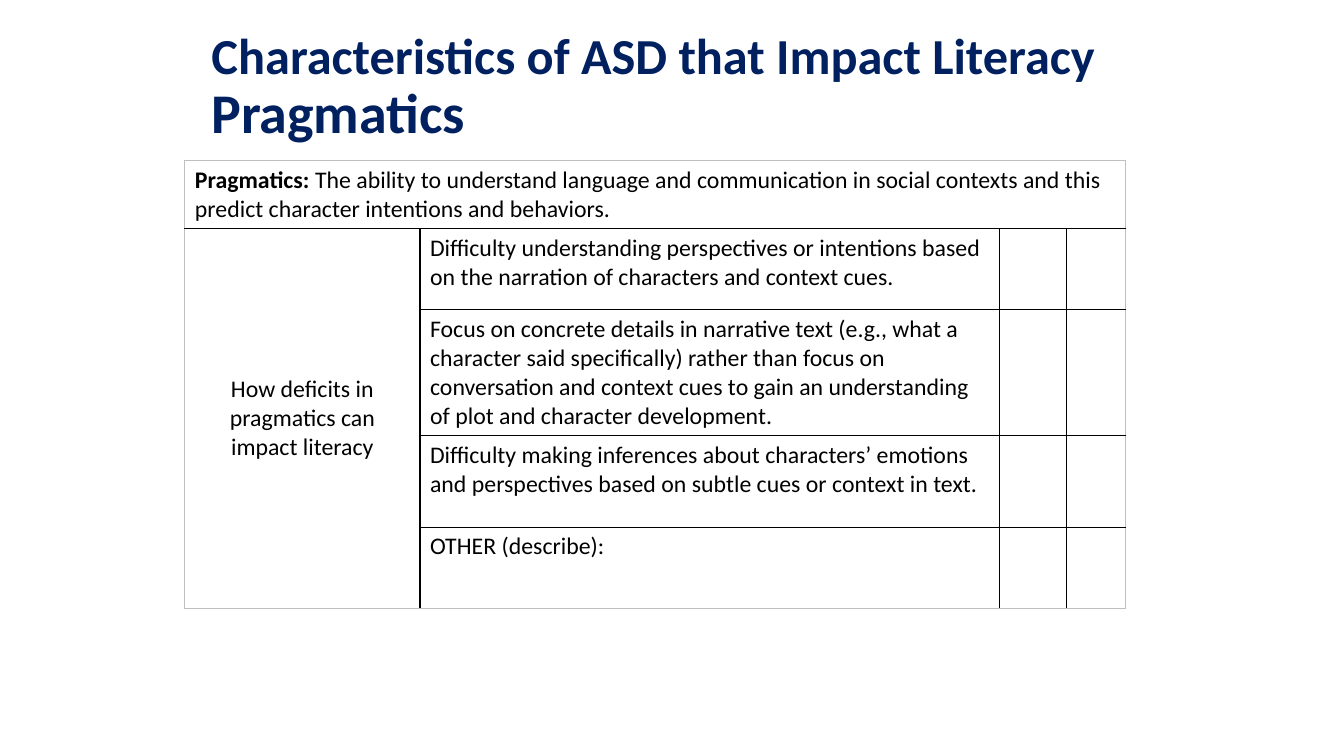
from pptx import Presentation
from pptx.dml.color import RGBColor
from pptx.enum.text import MSO_ANCHOR as Anchor, PP_ALIGN as Align
from pptx.oxml.ns import qn
from pptx.util import Pt
from lxml.etree import SubElement

# Content
TITLE = [("Characteristics of ASD that Impact Literacy", 36), ("Pragmatics", 40)]
TERM = "Pragmatics: "
DEFINITION = ("The ability to understand language and communication in social contexts "
              "and this predict character intentions and behaviors.")
QUESTION = "How deficits in pragmatics can impact literacy"
DEFICITS = [
    "Difficulty understanding perspectives or intentions based on the narration of "
    "characters and context cues.",
    "Focus on concrete details in narrative text (e.g., what a character said specifically) "
    "rather than focus on conversation and context cues to gain an understanding of plot "
    "and character development.",
    "Difficulty making inferences about characters’ emotions and perspectives based on "
    "subtle cues or context in text.",
    "OTHER (describe):",
]

# Layout and style, in points
COLUMNS = [168, 414, 48, 42]
ROWS = [49, 57.6, 90, 65.5, 57.6]
TABLE_LEFT, TABLE_TOP = 132, 114.5
FONT, NAVY, BLACK, GREY = "Calibri", "002060", "000000", "BFBFBF"
INNER, OUTER = (BLACK, 1), (GREY, 0.5)


def color(value):
    return RGBColor.from_string(value)


def add_text(para, text, size=17, shade=BLACK, bold=False, align=Align.LEFT):
    para.alignment = align
    span = para.add_run()
    span.text = text
    span.font.name, span.font.size, span.font.bold = FONT, Pt(size), bold
    span.font.color.rgb = color(shade)


def add_border(cell, side, shade, width):
    line = SubElement(cell._tc.get_or_add_tcPr(), qn(f"a:{side}"), w=str(Pt(width)))
    fill = SubElement(line, qn("a:solidFill"))
    SubElement(fill, qn("a:srgbClr"), val=shade)


deck = Presentation()
deck.slide_width, deck.slide_height = Pt(960), Pt(540)
page = deck.slides.add_slide(deck.slide_layouts[6])

# Title
box = page.shapes.add_textbox(Pt(144), Pt(18), Pt(648), Pt(90))
frame = box.text_frame
frame.word_wrap = True
frame.vertical_anchor = Anchor.MIDDLE
for index, (text, size) in enumerate(TITLE):
    para = frame.add_paragraph() if index else frame.paragraphs[0]
    para.line_spacing = 0.9
    add_text(para, text, size=size, shade=NAVY, bold=True)

# Table grid
table = page.shapes.add_table(len(ROWS), len(COLUMNS), Pt(TABLE_LEFT), Pt(TABLE_TOP),
                              Pt(sum(COLUMNS)), Pt(sum(ROWS))).table
table.first_row = table.horz_banding = False
for column, width in zip(table.columns, COLUMNS):
    column.width = Pt(width)
for row, height in zip(table.rows, ROWS):
    row.height = Pt(height)
last_row, last_column = len(ROWS) - 1, len(COLUMNS) - 1
header, question = table.cell(0, 0), table.cell(1, 0)
header.merge(table.cell(0, last_column))
question.merge(table.cell(last_row, 0))

# Borders: grey around the table, black inside
for r in range(len(ROWS)):
    for c in range(len(COLUMNS)):
        cell = table.cell(r, c)
        if not cell.is_spanned:
            right, bottom = c + cell.span_width - 1, r + cell.span_height - 1
            edges = {"lnL": c == 0, "lnR": right == last_column,
                     "lnT": r == 0, "lnB": bottom == last_row}
            for side, outside in edges.items():
                add_border(cell, side, *(OUTER if outside else INNER))
        cell.fill.background()

# Table text
para = header.text_frame.paragraphs[0]
add_text(para, TERM, bold=True)
add_text(para, DEFINITION)
question.vertical_anchor = Anchor.MIDDLE
add_text(question.text_frame.paragraphs[0], QUESTION, align=Align.CENTER)
for r, deficit in enumerate(DEFICITS, start=1):
    add_text(table.cell(r, 1).text_frame.paragraphs[0], deficit)

deck.save("out.pptx")
